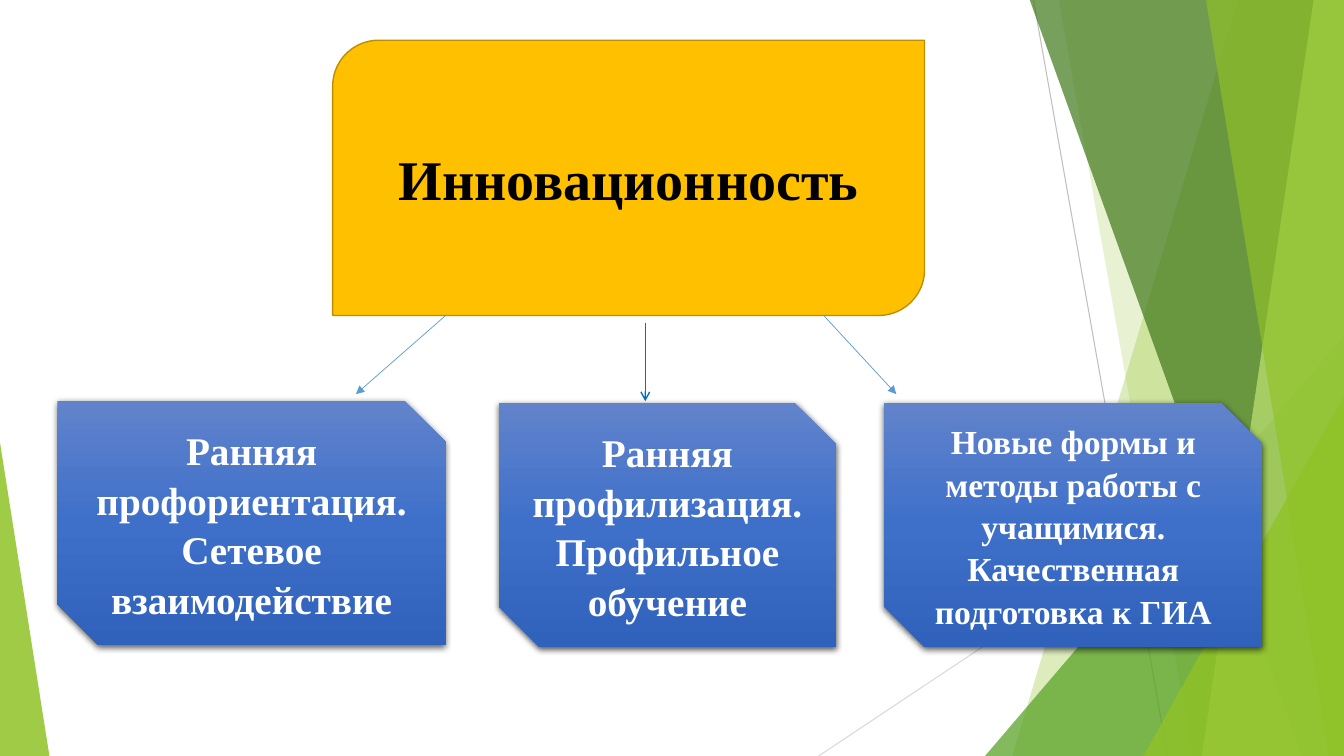
from lxml.etree import SubElement
from pptx import Presentation
from pptx.dml.color import RGBColor
from pptx.enum.shapes import MSO_CONNECTOR, MSO_SHAPE
from pptx.enum.text import MSO_ANCHOR, PP_ALIGN
from pptx.oxml.ns import qn
from pptx.util import Inches, Pt

# Content
TITLE = ("Инновационность",)
CARDS = [  # left, top, width, size, lines
    (0.57, 3.98, 3.85, 28, ("Ранняя профориентация.", "Сетевое взаимодействие")),
    (8.77, 4, 3.75, 24, ("Новые формы и методы работы с учащимися.",
                         "Качественная подготовка к ГИА")),
    (4.95, 4, 3.34, 28, ("Ранняя профилизация.", "Профильное обучение")),
]
CARD_H = 2.42
ARROWS = [  # from, to, colour, width, head
    ((4.42, 3.13), (3.53, 3.91), "5B9BD5", 0.5, "triangle"),
    ((8.17, 3.13), (8.89, 3.91), "5B9BD5", 0.5, "triangle"),
    ((6.4, 3.2), (6.4, 3.98), "0070C0", 1, "arrow"),
]
GRAD = [(0, "6183CB"), (50, "3E70CA"), (100, "3062BB")]

# Backdrop
W, H, TOP = 13.33, 7.5, -0.01
RAYS = [((10.25, 0), (11.58, H), "BFBFBF"), ((W, 4.03), (8.12, H), "D9D9D9")]
DECOR = [  # bands: top x, bottom x; wedges: box and apex
    ("band", (12.28, 10.04), "90C226", 30),
    ("band", (10.5, 11.83), "90C226", 20),
    ("wedge", (9.77, 3.33, 3.56, 4.17, 1), "54A021", 72),
    ("band", (10.21, 12.91), "3F7819", 70),
    ("band", (13.03, 11.92), "C0E474", 70),
    ("band", (11.96, 13.18), "90C226", 65),
    ("wedge", (11.34, 3.93, 1.99, 3.57, 1), "90C226", 80),
    ("wedge", (0, 4.39, 0.49, 3.11, 0), "90C226", 85),
]

deck = Presentation()
deck.slide_width, deck.slide_height = Inches(W), Inches(H)
slide = deck.slides.add_slide(deck.slide_layouts[6])
shapes = slide.shapes


def tint(color, code):
    color.rgb = RGBColor.from_string(code)


def node(parent, tag, **attrs):
    return SubElement(parent, qn(tag), {k: str(v) for k, v in attrs.items()})


def paint(shape, code, alpha=100, edge=None):
    shape.shadow.inherit = False
    shape.fill.solid()
    tint(shape.fill.fore_color, code)
    if alpha < 100:
        hue = shape.element.spPr.find(qn("a:solidFill"))[0]
        node(hue, "a:alpha", val=alpha * 1000)
    if edge:
        tint(shape.line.color, edge)
        shape.line.width = Pt(1)
    else:
        shape.line.fill.background()


def box(kind, *area):
    return shapes.add_shape(kind, *map(Inches, area))


def line(start, end, code, width, head=None):
    link = shapes.add_connector(MSO_CONNECTOR.STRAIGHT,
                                *map(Inches, start + end))
    tint(link.line.color, code)
    link.line.width = Pt(width)
    props = link.element.spPr
    if head:
        node(props.find(qn("a:ln")), "a:tailEnd", type=head)
    node(props, "a:effectLst")


def write(shape, lines, size, code, space=1.0):
    frame = shape.text_frame
    frame.word_wrap = True
    frame.vertical_anchor = MSO_ANCHOR.MIDDLE
    style = {"name": "Times New Roman", "size": Pt(size), "bold": True}
    for i, text in enumerate(lines):
        para = frame.add_paragraph() if i else frame.paragraphs[0]
        para.alignment = PP_ALIGN.CENTER
        para.line_spacing = space
        run = para.add_run()
        run.text = text
        for key, value in style.items():
            setattr(run.font, key, value)
        tint(run.font.color, code)


def shade(shape):
    """Vertical gradient and a soft shadow below."""
    shape.fill.gradient()
    shape.fill.gradient_angle = 270
    props = shape.element.spPr
    stops = props.find(qn("a:gradFill")).find(qn("a:gsLst"))
    for stop in list(stops):
        stops.remove(stop)
    for pos, code in GRAD:
        node(node(stops, "a:gs", pos=pos * 1000), "a:srgbClr", val=code)
    drop = node(props.find(qn("a:effectLst")), "a:outerShdw", blurRad=Pt(4.5),
                dist=Pt(1.5), dir=5400000, algn="ctr", rotWithShape=0)
    node(node(drop, "a:srgbClr", val="000000"), "a:alpha", val=63000)


# Backdrop rays, bands and wedges
for start, end, code in RAYS:
    line(start, end, code, 0.75)
for kind, place, code, alpha in DECOR:
    if kind == "band":
        upper, lower = place
        pen = shapes.build_freeform(Inches(upper), Inches(TOP))
        edge = [(W, TOP), (W, H), (lower, H)]
        pen.add_line_segments([(Inches(x), Inches(y)) for x, y in edge], close=True)
        part = pen.convert_to_shape()
    else:
        part = box(MSO_SHAPE.ISOSCELES_TRIANGLE, *place[:4])
        part.adjustments[0] = place[4]
    paint(part, code, alpha)

# Heading
head = box(MSO_SHAPE.ROUND_2_DIAG_RECTANGLE, 3.3, 0.4, 5.87, 2.73)
paint(head, "FFC000", edge="BD8E00")
write(head, TITLE, 40, "000000")

# Cards
for left, top, width, size, lines in CARDS:
    card = box(MSO_SHAPE.SNIP_2_DIAG_RECTANGLE, left, top, width, CARD_H)
    paint(card, GRAD[1][1])
    shade(card)
    write(card, lines, size, "FFFFFF", 1.05)

# Arrows
for arrow in ARROWS:
    line(*arrow)

deck.save("out.pptx")
